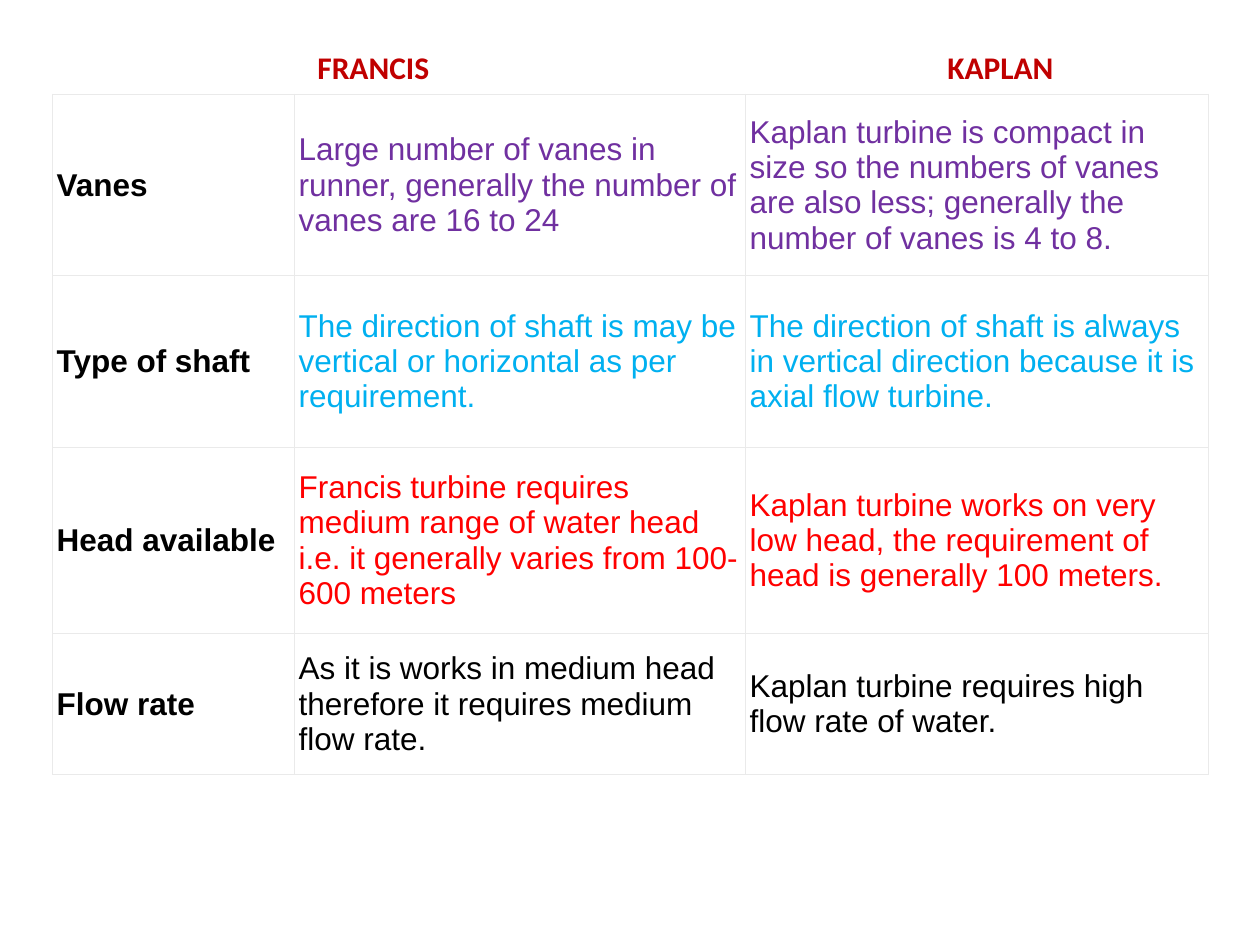
from dataclasses import dataclass

from lxml import etree
from pptx import Presentation
from pptx import util as u
from pptx.dml.color import RGBColor
from pptx.enum import text as t
from pptx.oxml.ns import qn

PX = 9144  # EMU per px, 100 px to the inch

BLACK = RGBColor(0x00, 0x00, 0x00)
WHITE = RGBColor(0xFF, 0xFF, 0xFF)
GREY = RGBColor(0xEA, 0xEA, 0xEA)
PURPLE = RGBColor(0x70, 0x30, 0xA0)
BLUE = RGBColor(0x00, 0xB0, 0xF0)
RED = RGBColor(0xFF, 0x00, 0x00)
MAROON = RGBColor(0xC0, 0x00, 0x00)


@dataclass(frozen=True)
class Row:
    height: int
    color: RGBColor
    label: str
    francis: str
    kaplan: str


COLS = (192, 358, 367)
ROWS = (
    Row(144, PURPLE, "Vanes",
        "Large number of vanes in runner, generally the number of vanes are 16 to 24",
        "Kaplan turbine is compact in size so the numbers of vanes are also less; "
        "generally the number of vanes is 4 to 8."),
    Row(136, BLUE, "Type of shaft",
        "The direction of shaft is may be vertical or horizontal as per requirement.",
        "The direction of shaft is always in vertical direction because it is "
        "axial flow turbine."),
    Row(148, RED, "Head available",
        "Francis turbine requires medium range of water head i.e. it generally "
        "varies from 100-600 meters",
        "Kaplan turbine works on very low head, the requirement of head is "
        "generally 100 meters."),
    Row(112, BLACK, "Flow rate",
        "As it is works in medium head therefore it requires medium flow rate.",
        "Kaplan turbine requires high flow rate of water."),
)
CELL = {
    "margin_left": 3 * PX,
    "margin_right": 3 * PX,
    "margin_top": 2 * PX,
    "margin_bottom": 2 * PX,
    "vertical_anchor": t.MSO_ANCHOR.MIDDLE,
}


def assign(item, values: dict) -> None:
    for name, value in values.items():
        setattr(item, name, value)


def write(para, words: str, face: str, color: RGBColor, bold: bool) -> None:
    run = para.add_run()
    run.text = words
    assign(run.font, {"name": face, "size": u.Pt(18), "bold": bold})
    run.font.color.rgb = color


def border(cell) -> None:
    """Draw all four sides; the lines must come before the fill."""
    props = cell._tc.get_or_add_tcPr()
    for spot, side in enumerate(("a:lnL", "a:lnR", "a:lnT", "a:lnB")):
        line = etree.Element(qn(side), w=str(u.Pt(0.75)))
        fill = etree.SubElement(line, qn("a:solidFill"))
        etree.SubElement(fill, qn("a:srgbClr"), val=str(GREY))
        props.insert(spot, line)


def draw_table(slide, left: int, top: int) -> None:
    high = sum(row.height for row in ROWS)
    frame = slide.shapes.add_table(
        len(ROWS), len(COLS), left * PX, top * PX, sum(COLS) * PX, high * PX)
    table = frame.table
    assign(table, {"first_row": False, "horz_banding": False})
    for col, width in zip(table.columns, COLS):
        col.width = width * PX
    for line, row in zip(table.rows, ROWS):
        line.height = row.height * PX
        words = (row.label, row.francis, row.kaplan)
        for index, (cell, word) in enumerate(zip(line.cells, words)):
            head = index == 0
            assign(cell, CELL)
            cell.fill.solid()
            cell.fill.fore_color.rgb = WHITE
            border(cell)
            write(cell.text_frame.paragraphs[0], word, "Arial",
                  BLACK if head else row.color, head)


def draw_heads(slide, left: int, top: int, width: int, height: int) -> None:
    """Both column heads on one line, the second at a tab stop."""
    box = slide.shapes.add_textbox(left * PX, top * PX, width * PX, height * PX)
    assign(box.text_frame, {"word_wrap": True,
                            "auto_size": t.MSO_AUTO_SIZE.SHAPE_TO_FIT_TEXT})
    para = box.text_frame.paragraphs[0]
    tabs = etree.SubElement(para._p.get_or_add_pPr(), qn("a:tabLst"))
    etree.SubElement(tabs, qn("a:tab"), pos=str(500 * PX), algn="l")
    write(para, "FRANCIS\tKAPLAN", "Calibri", MAROON, True)


def main() -> None:
    deck = Presentation()
    assign(deck, {"slide_width": 1000 * PX, "slide_height": 750 * PX})
    slide = deck.slides.add_slide(deck.slide_layouts[6])
    draw_table(slide, 42, 75)
    draw_heads(slide, 242, 33, 692, 40)
    deck.save("out.pptx")


if __name__ == "__main__":
    main()
